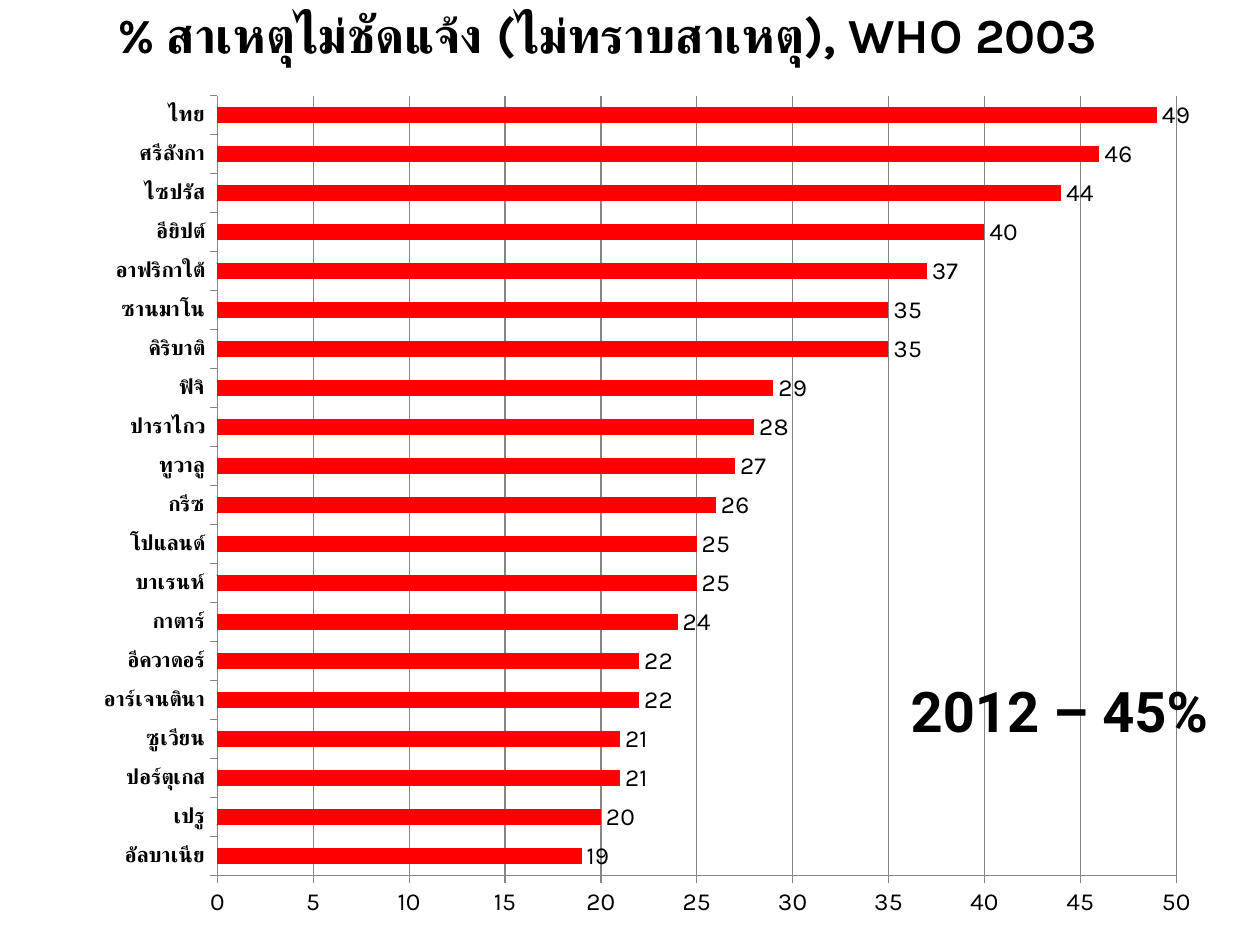
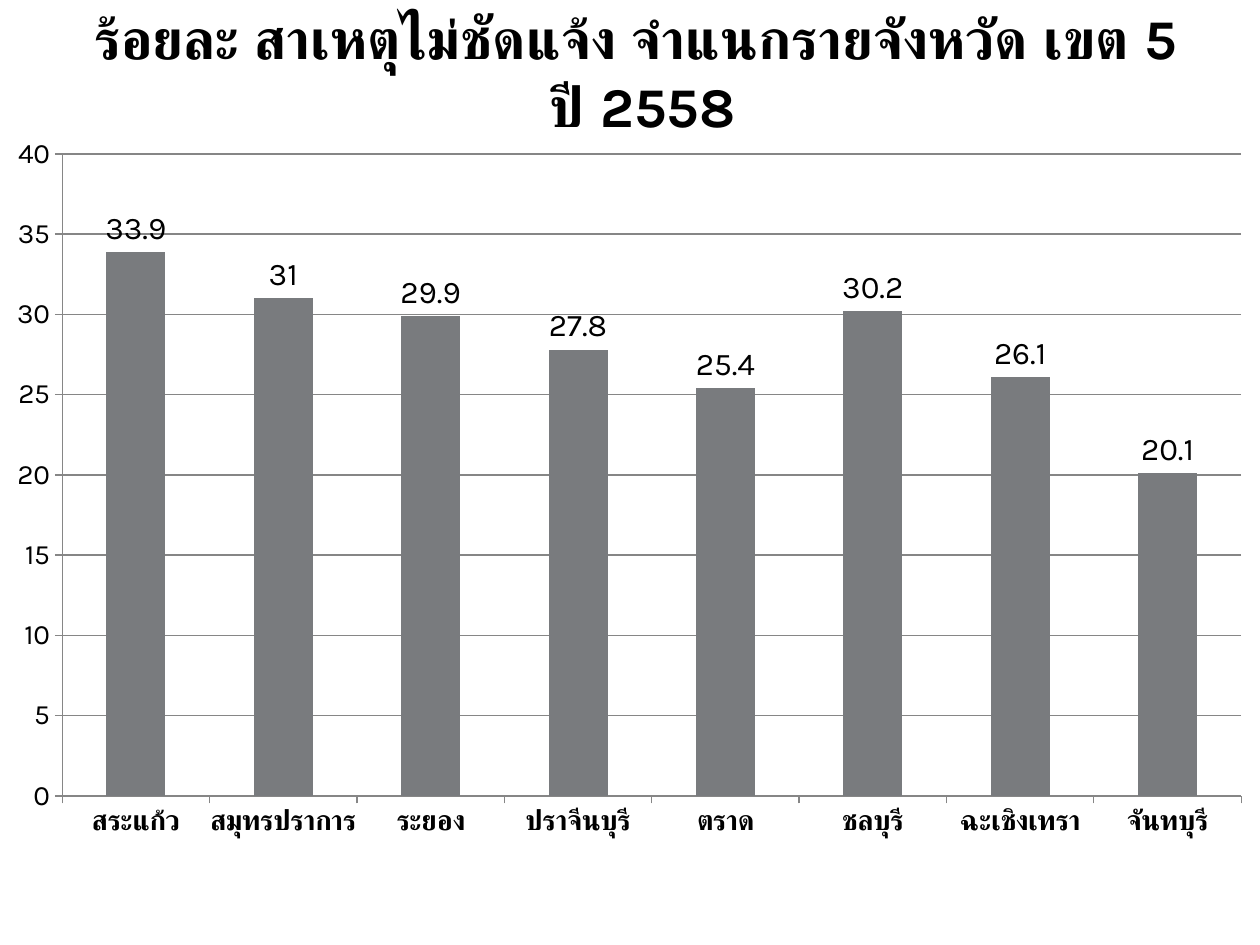
"""Builds two slides on the share of unclear causes of death."""

from lxml.etree import SubElement
from pptx import Presentation
from pptx.chart.data import CategoryChartData
from pptx.dml.color import RGBColor
from pptx.enum.chart import XL_CHART_TYPE, XL_LABEL_POSITION, XL_TICK_MARK
from pptx.enum.text import MSO_ANCHOR, PP_ALIGN
from pptx.oxml.ns import qn
from pptx.util import Cm, Pt

BLACK, GRID, RED, GRAY = "000000", "868686", "FF0000", "797B7E"
BODY_FONT, NOTE_FONT = "Karla", "Roboto"

COUNTRIES = [
    ("อัลบาเนีย", 19), ("เปรู", 20), ("ปอร์ตุเกส", 21), ("ซูเวียน", 21),
    ("อาร์เจนตินา", 22), ("อีควาดอร์", 22), ("กาตาร์", 24), ("บาเรนห์", 25),
    ("โปแลนด์", 25), ("กรีซ", 26), ("ทูวาลู", 27), ("ปาราไกว", 28),
    ("ฟิจิ", 29), ("คิริบาติ", 35), ("ซานมาโน", 35), ("อาฟริกาใต้", 37),
    ("อียิปต์", 40), ("ไซปรัส", 44), ("ศรีลังกา", 46), ("ไทย", 49),
]
PROVINCES = [
    ("สระแก้ว", 33.9), ("สมุทรปราการ", 31), ("ระยอง", 29.9), ("ปราจีนบุรี", 27.8),
    ("ตราด", 25.4), ("ชลบุรี", 30.2), ("ฉะเชิงเทรา", 26.1), ("จันทบุรี", 20.1),
]

SLIDES = [
    {
        "texts": [
            {"text": "% สาเหตุไม่ชัดแจ้ง (ไม่ทราบสาเหตุ), WHO 2003",
             "box": (2.11, -0.28, 22.96, 1.93), "size": 28},
            {"text": "2012 – 45%", "box": (18.11, 13.51, 6.58, 1.63), "size": 32,
             "font": NOTE_FONT, "anchor": MSO_ANCHOR.TOP, "wrap": False},
        ],
        "chart": {"kind": XL_CHART_TYPE.BAR_CLUSTERED, "rows": COUNTRIES, "color": RED,
                  "box": (1.3, 1.52, 23.01, 17.2), "plot": (0.134, 0.024, 0.84, 0.914),
                  "maximum": 50, "label_size": 14, "category_size": 12, "value_size": 14},
    },
    {
        "texts": [
            {"text": "ร้อยละ สาเหตุไม่ชัดแจ้ง จำแนกรายจังหวัด เขต 5\n ปี 2558",
             "box": (0.51, 0.33, 24.61, 2.21), "size": 32, "align": PP_ALIGN.CENTER},
        ],
        "chart": {"kind": XL_CHART_TYPE.COLUMN_CLUSTERED, "rows": PROVINCES, "color": GRAY,
                  "box": (0.3, 2.72, 25.1, 16), "plot": (0.038, 0.024, 0.947, 0.809),
                  "maximum": 40, "label_size": 18, "category_size": 16, "value_size": 16},
    },
]


def rgb(color):
    """Turns a hex string into a colour."""
    return RGBColor.from_string(color)


def style_font(font, size, name=BODY_FONT, bold=False):
    """Sets the look of a piece of text."""
    font.name, font.size, font.bold = name, Pt(size), bold
    font.color.rgb = rgb(BLACK)


def style_line(line):
    """Gives an axis or a gridline its thin gray stroke."""
    line.color.rgb = rgb(GRID)
    line.width = Pt(0.75)


def add_text(slide, text, box, size, font=BODY_FONT, align=PP_ALIGN.LEFT,
             anchor=MSO_ANCHOR.MIDDLE, wrap=True):
    """Adds a bold text box."""
    text_frame = slide.shapes.add_textbox(*map(Cm, box)).text_frame
    text_frame.word_wrap = wrap
    text_frame.vertical_anchor = anchor
    paragraph = text_frame.paragraphs[0]
    paragraph.text = text
    paragraph.alignment = align
    for run in paragraph.runs:
        style_font(run.font, size, font, True)


def place_plot(chart, plot_box):
    """Fixes the inner plot area as fractions of the chart."""
    plot_area = chart.plots[0]._element.getparent()
    layout = plot_area.find(qn("c:layout"))
    if layout is None:
        layout = SubElement(plot_area, qn("c:layout"))
        plot_area.insert(0, layout)
    manual = SubElement(layout, qn("c:manualLayout"))
    settings = [("layoutTarget", "inner"), ("xMode", "edge"), ("yMode", "edge")]
    settings += zip("xywh", plot_box)
    for tag, value in settings:
        SubElement(manual, qn(f"c:{tag}")).set("val", str(value))


def add_bars(slide, kind, rows, color, box, plot, maximum,
             label_size, category_size, value_size):
    """Adds a one-series bar chart with value labels."""
    categories, values = zip(*rows)
    data = CategoryChartData()
    data.categories = categories
    data.add_series("Series 1", values)
    chart = slide.shapes.add_chart(kind, *map(Cm, box), data).chart
    chart.has_title = chart.has_legend = False
    style_font(chart.font, label_size)
    place_plot(chart, plot)

    bars = chart.plots[0]
    bars.gap_width = 150
    bars.vary_by_categories = False
    fill = bars.series[0].format.fill
    fill.solid()
    fill.fore_color.rgb = rgb(color)
    bars.has_data_labels = True
    labels = bars.data_labels
    labels.show_value = True
    labels.position = XL_LABEL_POSITION.OUTSIDE_END
    style_font(labels.font, label_size)

    for axis, size, bold in ((chart.category_axis, category_size, True),
                             (chart.value_axis, value_size, False)):
        axis.major_tick_mark = XL_TICK_MARK.OUTSIDE
        style_font(axis.tick_labels.font, size, bold=bold)
        style_line(axis.format.line)
    value_axis = chart.value_axis
    value_axis.minimum_scale, value_axis.maximum_scale = 0, maximum
    value_axis.major_unit = 5
    value_axis.has_major_gridlines = True
    style_line(value_axis.major_gridlines.format.line)


def main():
    """Builds and saves the presentation."""
    presentation = Presentation()
    presentation.slide_width, presentation.slide_height = Cm(25.4), Cm(19.05)
    for content in SLIDES:
        slide = presentation.slides.add_slide(presentation.slide_layouts[6])
        add_bars(slide, **content["chart"])
        for text in content["texts"]:
            add_text(slide, **text)
    presentation.save("out.pptx")


if __name__ == "__main__":
    main()
